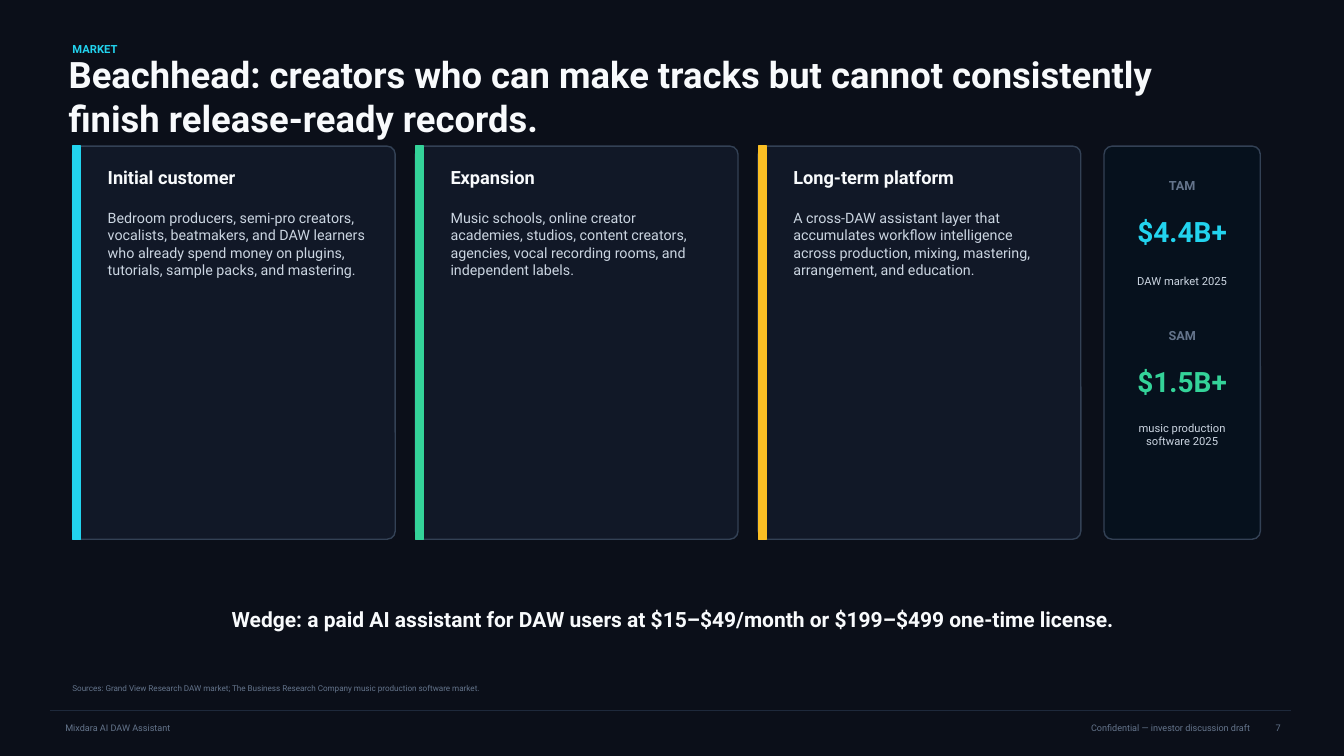
from lxml import etree
from pptx import Presentation
from pptx.dml.color import RGBColor
from pptx.enum.shapes import MSO_CONNECTOR, MSO_SHAPE
from pptx.enum.text import MSO_ANCHOR, MSO_AUTO_SIZE, PP_ALIGN
from pptx.oxml.ns import qn
from pptx.util import Inches, Pt

LEFT, CENTER, RIGHT = PP_ALIGN.LEFT, PP_ALIGN.CENTER, PP_ALIGN.RIGHT
TOP, MIDDLE = MSO_ANCHOR.TOP, MSO_ANCHOR.MIDDLE
NO_FIT = MSO_AUTO_SIZE.NONE
ROUNDED, RECT = MSO_SHAPE.ROUNDED_RECTANGLE, MSO_SHAPE.RECTANGLE
STRAIGHT = MSO_CONNECTOR.STRAIGHT

WIDTH, HEIGHT = 13.33, 7.5
TITLE_ONLY = 5
CARD_W, CARD_H, CARD_GAP = 3.2, 3.9, 0.2
CARDS_LEFT, CARDS_TOP = 0.72, 1.45
STRIPE_W, CORNER = 0.08, 0.08
METRIC_PITCH = 1.49
CYAN, GREEN, AMBER = "22D3EE", "34D399", "FBBF24"
WHITE, PALE, MUTED, EDGE = "F8FAFC", "CBD5E1", "64748B", "334155"

FONTS = {
    "kicker": {"size": Pt(8), "bold": True},
    "title": {"size": Pt(26), "bold": True},
    "heading": {"size": Pt(13), "bold": True},
    "body": {"size": Pt(10.2), "bold": False},
    "label": {"size": Pt(9), "bold": True},
    "value": {"size": Pt(20), "bold": True},
    "caption": {"size": Pt(8), "bold": False},
    "wedge": {"size": Pt(15), "bold": True},
    "sources": {"size": Pt(5.8), "bold": False},
    "footer": {"size": Pt(6.5), "bold": False},
}

CARDS = [
    ("Initial customer", CYAN,
     "Bedroom producers, semi-pro creators, vocalists, beatmakers, and DAW learners "
     "who already spend money on plugins, tutorials, sample packs, and mastering."),
    ("Expansion", GREEN,
     "Music schools, online creator academies, studios, content creators, agencies, "
     "vocal recording rooms, and independent labels."),
    ("Long-term platform", AMBER,
     "A cross-DAW assistant layer that accumulates workflow intelligence across "
     "production, mixing, mastering, arrangement, and education."),
]
METRICS = [
    ("TAM", "$4.4B+", CYAN, "DAW market 2025", 0.38),
    ("SAM", "$1.5B+", GREEN, "music production software 2025", 0.44),
]


def color(hex_code):
    """Turn a hex string into a colour."""
    return RGBColor.from_string(hex_code)


def inches(box):
    """Convert a box in inches to slide units."""
    return [Inches(length) for length in box]


def write(holder, text, style, ink, align=LEFT, anchor=MIDDLE):
    """Put one styled paragraph into a text holder."""
    frame = holder.text_frame
    frame.text = text
    settings = {"word_wrap": True, "auto_size": NO_FIT, "vertical_anchor": anchor}
    for name, value in settings.items():
        setattr(frame, name, value)
    paragraph = frame.paragraphs[0]
    paragraph.alignment = align
    font = paragraph.runs[0].font
    for name, value in {"name": "Roboto", **FONTS[style]}.items():
        setattr(font, name, value)
    font.color.rgb = color(ink)


def add_text(slide, box, *content, **placing):
    """Add a text box with one styled paragraph."""
    write(slide.shapes.add_textbox(*inches(box)), *content, **placing)


def add_panel(slide, kind, box, fill, edge):
    """Add a filled and outlined shape."""
    panel = slide.shapes.add_shape(kind, *inches(box))
    panel.shadow.inherit = False
    panel.fill.solid()
    panel.fill.fore_color.rgb = color(fill)
    panel.line.color.rgb = color(edge)
    panel.line.width = Pt(1)
    if kind == ROUNDED:
        panel.adjustments[0] = CORNER / min(box[2:])


def add_header(slide, box):
    """Place the kicker and the title."""
    left, top, width, height = box
    add_text(slide, (left + 0.04, top, 4.5, 0.22), "MARKET", "kicker", CYAN)
    title = slide.shapes.title
    title.left, title.top, title.width, title.height = inches(
        (left, top + 0.3, width, height - 0.3))
    write(title, "Beachhead: creators who can make tracks but cannot consistently "
          "finish release-ready records.", "title", WHITE)


def add_card(slide, box, heading, accent, body):
    """Draw a segment card with an accent stripe."""
    left, top, width, height = box
    add_panel(slide, ROUNDED, box, "111827", EDGE)
    add_panel(slide, RECT, (left, top, STRIPE_W, height), accent, accent)
    text_left, text_width = left + 0.25, width - 0.45
    add_text(slide, (text_left, top + 0.18, text_width, 0.25), heading, "heading", WHITE)
    add_text(slide, (text_left, top + 0.58, text_width, height - 0.74),
             body, "body", PALE, anchor=TOP)


def add_metrics(slide, box):
    """Draw the market size panel."""
    left, top, width, _ = box
    add_panel(slide, ROUNDED, box, "06111D", EDGE)
    for row, (label, value, accent, caption, caption_h) in enumerate(METRICS):
        row_top = top + 0.29 + row * METRIC_PITCH
        lines = [
            (0, 1.25, 0.2, label, "label", MUTED),
            (0.34, 1.35, 0.42, value, "value", accent),
            (0.86, 1.3, caption_h, caption, "caption", PALE),
        ]
        for drop, line_w, line_h, text, style, ink in lines:
            add_text(slide, (left + (width - line_w) / 2, row_top + drop, line_w, line_h),
                     text, style, ink, align=CENTER)


def add_closing(slide, box):
    """Place the wedge statement and the sources."""
    left, top, width, height = box
    add_text(slide, (left + 0.33, top, 11.45, 0.38),
             "Wedge: a paid AI assistant for DAW users at $15–$49/month or "
             "$199–$499 one-time license.", "wedge", WHITE, align=CENTER)
    add_text(slide, (left, top + height - 0.22, width, 0.22),
             "Sources: Grand View Research DAW market; The Business Research Company "
             "music production software market.", "sources", MUTED)


def add_footer(slide, box):
    """Draw the footer rule, its two notes and the page number."""
    left, top, width, _ = box
    right = left + width
    rule = slide.shapes.add_connector(STRAIGHT, *inches((left, top, right, top)))
    rule.line.color.rgb = color("1E293B")
    rule.line.width = Pt(0.8)
    etree.SubElement(rule._element.spPr, qn("a:effectLst"))
    note_top, note_h, note_w, number_w = top + 0.07, 0.2, 3.6, 0.3
    number_left = right - number_w
    add_text(slide, (left + 0.05, note_top, 3.7, note_h),
             "Mixdara AI DAW Assistant", "footer", MUTED)
    add_text(slide, (number_left - note_w, note_top, note_w, note_h),
             "Confidential — investor discussion draft", "footer", MUTED, align=RIGHT)
    add_text(slide, (number_left, note_top, number_w, note_h),
             "7", "footer", MUTED, align=RIGHT)


def add_market_slide(deck):
    """Compose the market slide."""
    slide = deck.slides.add_slide(deck.slide_layouts[TITLE_ONLY])
    slide.background.fill.solid()
    slide.background.fill.fore_color.rgb = color("0B0F19")
    add_footer(slide, (0.5, 7.05, 12.3, 0.4))
    add_header(slide, (0.58, 0.38, 11.9, 0.85))
    for column, card in enumerate(CARDS):
        card_left = CARDS_LEFT + column * (CARD_W + CARD_GAP)
        add_card(slide, (card_left, CARDS_TOP, CARD_W, CARD_H), *card)
    add_metrics(slide, (10.95, CARDS_TOP, 1.55, CARD_H))
    add_closing(slide, (0.62, 5.95, 12.1, 0.99))


def main():
    """Build and save the deck."""
    deck = Presentation()
    deck.slide_width, deck.slide_height = inches((WIDTH, HEIGHT))
    add_market_slide(deck)
    deck.save("out.pptx")


if __name__ == "__main__":
    main()
